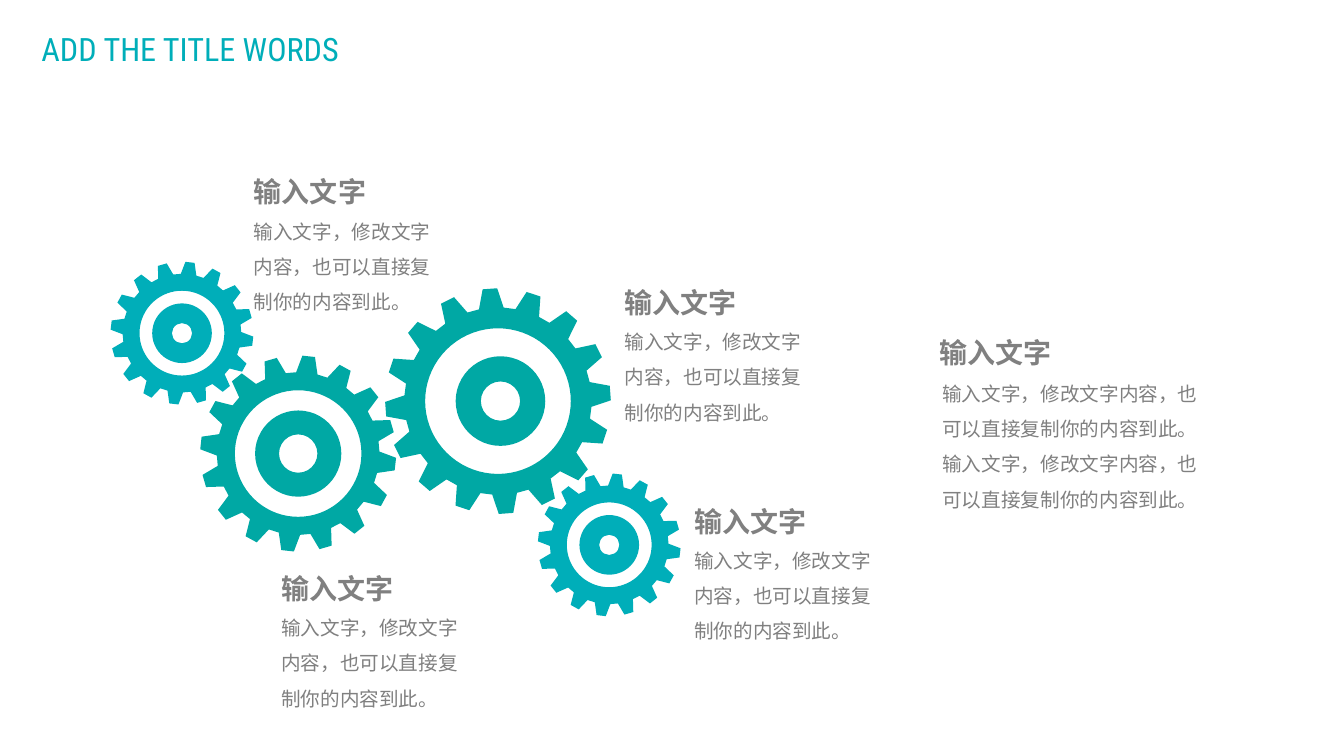
"""Build the slide with four meshing gears and their captions."""
from math import cos, radians, sin

from lxml import etree
from pptx import Presentation
from pptx.dml.color import RGBColor
from pptx.enum import shapes, text
from pptx.oxml.ns import qn
from pptx.util import Pt

GREEN = RGBColor(0x00, 0xA8, 0xA4)
CYAN = RGBColor(0x00, 0xAE, 0xB9)
GRAY = RGBColor(0x80, 0x80, 0x80)
CJK_FONT = "Noto Sans CJK SC"
TEETH = 16
TOOTH_PROFILE = [(-7.6, 0.83), (-3.7, 1), (3.7, 1), (7.6, 0.83)]
HEADING = "输入文字"
SENTENCE = "输入文字，修改文字内容，也可以直接复制你的内容到此。"


def write(box, words, size, font, color, spacing, inset, align, bold=False):
    """Fill a box with one formatted paragraph."""
    frame = box.text_frame
    frame.text = words
    frame.word_wrap = True
    frame.auto_size = text.MSO_AUTO_SIZE.SHAPE_TO_FIT_TEXT
    frame.vertical_anchor = text.MSO_ANCHOR.TOP
    frame.margin_left = frame.margin_right = Pt(inset)
    frame.margin_top = frame.margin_bottom = Pt(inset / 2)
    paragraph = frame.paragraphs[0]
    paragraph.alignment = align
    paragraph.line_spacing = spacing
    run = paragraph.runs[0]
    run.font.size = Pt(size)
    run.font.name = font
    run.font.bold = bold
    run.font.color.rgb = color
    east_asian = etree.SubElement(run.font._element, qn("a:ea"))
    east_asian.set("typeface", CJK_FONT)


def polar(center_x, center_y, radius, angle):
    """Return the point at an angle on a circle."""
    turn = radians(angle)
    return Pt(center_x + radius * cos(turn)), Pt(center_y + radius * sin(turn))


prs = Presentation()
prs.slide_width, prs.slide_height = Pt(960), Pt(540)
slide = prs.slides.add_slide(prs.slide_layouts[5])

title = slide.shapes.title
title.left, title.top, title.width, title.height = Pt(23), Pt(3.6), Pt(242), Pt(49)
write(title, "ADD THE TITLE WORDS", 23, "Roboto Condensed", CYAN, 1.5, 6.6, text.PP_ALIGN.LEFT)

# center x, center y, tip radius, ring hole, disc shift, disc radius, hub hole, turn, color
gears = [
    (213, 324, 70, 45.2, 0, 30.8, 13.7, 6.2, GREEN),
    (355.7, 286.5, 80.6, 52, 1.8, 32, 14, -4.1, GREEN),
    (130, 238, 51, 30.3, 0, 21.3, 7.2, 6.5, CYAN),
    (435.2, 389.2, 51, 30.3, 0, 21.3, 7.2, 6.5, CYAN),
]
for x, y, tip, hole, shift, disc, hub, turn, color in gears:
    gear = slide.shapes.add_group_shape()
    teeth = [
        polar(x, y, tip * ratio, turn + tooth * 360 / TEETH + offset)
        for tooth in range(TEETH)
        for offset, ratio in TOOTH_PROFILE
    ]
    opening = [polar(x, y, hole, -angle) for angle in range(0, 360, 5)]
    outline = gear.shapes.build_freeform(*teeth[0])
    outline.add_line_segments(teeth[1:], close=True)
    outline.move_to(*opening[0])
    outline.add_line_segments(opening[1:], close=True)
    rim = outline.convert_to_shape()
    center = gear.shapes.add_shape(
        shapes.MSO_SHAPE.DONUT, Pt(x + shift - disc), Pt(y - disc), Pt(2 * disc), Pt(2 * disc)
    )
    center.adjustments[0] = (disc - hub) / (2 * disc)
    for part in (rim, center):
        part.shadow.inherit = False
        part.fill.solid()
        part.fill.fore_color.rgb = color
        part.line.fill.background()

# heading left, top, width, body left shift, top shift, width, height, sentences
captions = [
    (181.4, 120.2, 144, -7.2, 24.7, 144, 83.5, 1),
    (201, 403.4, 144, -7.2, 24.7, 144, 83.5, 1),
    (446.2, 199, 144, -7.2, 24.7, 144, 83.5, 1),
    (496, 355.4, 144, -7.2, 24.7, 144, 83.5, 1),
    (671, 234.7, 102, -5, 26, 209.5, 108.7, 2),
]
for left, top, width, shift, drop, body_width, body_height, sentences in captions:
    heading = slide.shapes.add_textbox(Pt(left), Pt(top), Pt(width), Pt(28.8))
    write(heading, HEADING, 20, "Arial", GRAY, 1.2, 0, text.PP_ALIGN.JUSTIFY, bold=True)
    body = slide.shapes.add_textbox(
        Pt(left + shift), Pt(top + drop), Pt(body_width), Pt(body_height)
    )
    write(body, SENTENCE * sentences, 14, CJK_FONT, GRAY, 1.5, 7.2, text.PP_ALIGN.LEFT)

prs.save("out.pptx")
